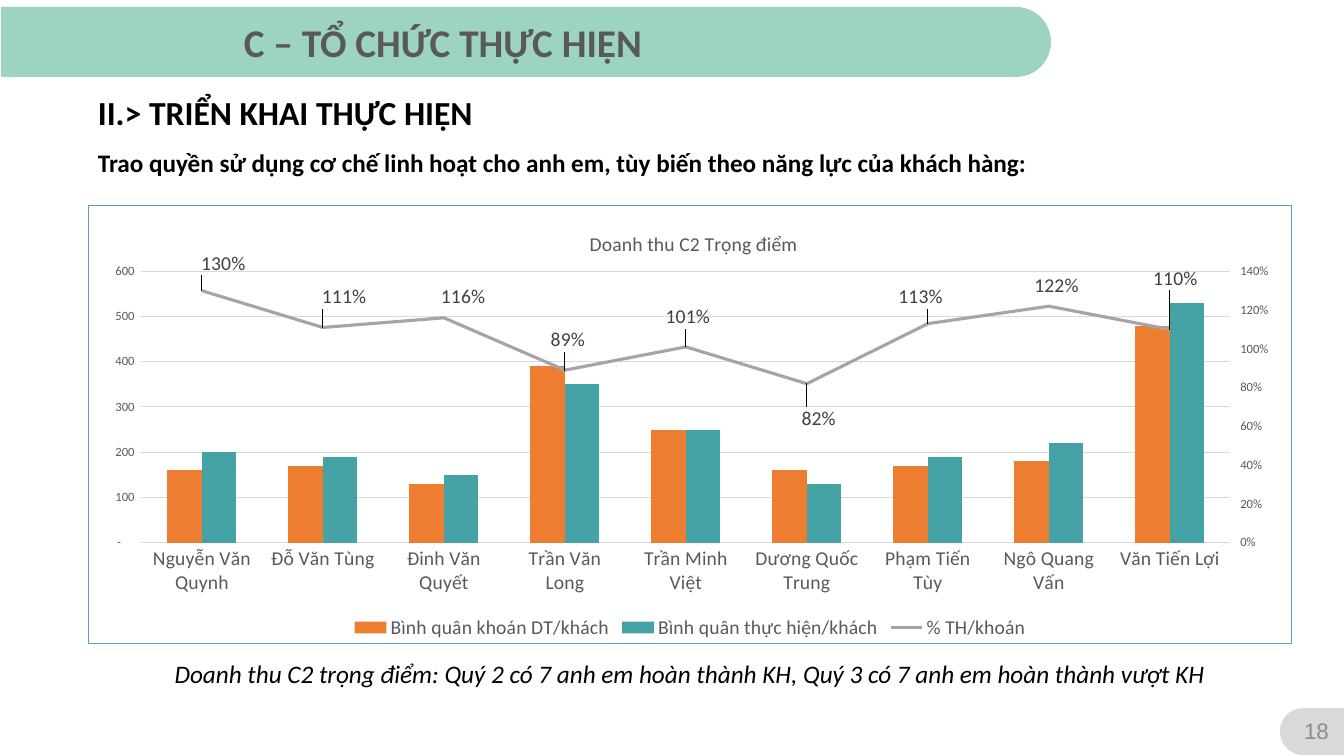
"""Build the slide on key customer revenue with a combined column and line chart."""
from lxml.etree import SubElement
from pptx import Presentation
from pptx.chart.data import CategoryChartData
from pptx.dml.color import RGBColor
from pptx.enum.chart import (
    XL_CHART_TYPE, XL_LABEL_POSITION, XL_LEGEND_POSITION, XL_MARKER_STYLE, XL_TICK_MARK)
from pptx.enum.shapes import MSO_SHAPE
from pptx.enum.text import MSO_ANCHOR, PP_ALIGN
from pptx.oxml import parse_xml
from pptx.oxml.ns import nsdecls, qn
from pptx.util import Emu, Pt

MINT = RGBColor(0x9C, 0xD4, 0xC1)
LIGHT_GRAY = RGBColor(0xD9, 0xD9, 0xD9)
PAGE_GRAY = RGBColor(0x8C, 0x8C, 0x8C)
DARK_GRAY = RGBColor(0x59, 0x59, 0x59)
LABEL_GRAY = RGBColor(0x40, 0x40, 0x40)
LINE_GRAY = RGBColor(0xA5, 0xA5, 0xA5)
ORANGE = RGBColor(0xED, 0x7D, 0x31)
TEAL = RGBColor(0x45, 0xA3, 0xA5)
BLUE = RGBColor(0x5B, 0x9B, 0xD5)
BLACK = RGBColor(0, 0, 0)


def px(count):
    return Emu(round(count * 914400 / 100.8))


def add_text(text, left, top, width, height, size, color=BLACK, font="Calibri", bold=False,
             italic=False, align=PP_ALIGN.LEFT, anchor=MSO_ANCHOR.TOP, spacing=1.0):
    frame = slide.shapes.add_textbox(px(left), px(top), px(width), px(height)).text_frame
    frame.word_wrap = True
    frame.vertical_anchor = anchor
    paragraph = frame.paragraphs[0]
    paragraph.alignment = align
    paragraph.line_spacing = spacing
    run = paragraph.add_run()
    run.text = text
    run.font.name = font
    run.font.size = Pt(size)
    run.font.bold = bold
    run.font.italic = italic
    run.font.color.rgb = color


presentation = Presentation()
presentation.slide_width = px(1344)
presentation.slide_height = px(756)
slide = presentation.slides.add_slide(presentation.slide_layouts[6])

for left, top, width, height, rotation, color in [
    (491, -483, 70, 1050, 90, MINT),
    (1289, 699, 47, 65, 270, LIGHT_GRAY),
]:
    shape = slide.shapes.add_shape(
        MSO_SHAPE.ROUND_2_SAME_RECTANGLE, px(left), px(top), px(width), px(height))
    shape.adjustments[0] = 0.5
    shape.rotation = rotation
    shape.shadow.inherit = False
    shape.fill.solid()
    shape.fill.fore_color.rgb = color
    shape.line.fill.background()

add_text("18", 1292, 711, 49, 40, 16, color=PAGE_GRAY, font="Arial",
         align=PP_ALIGN.CENTER, anchor=MSO_ANCHOR.MIDDLE)
add_text("C – TỔ CHỨC THỰC HIỆN", 234, 13, 814, 57, 28, color=DARK_GRAY, bold=True)

CHART_LEFT, CHART_TOP, CHART_WIDTH, CHART_HEIGHT = 88, 205, 1204, 439
PLOT_LEFT, PLOT_TOP, PLOT_WIDTH, PLOT_HEIGHT = 141, 271, 1090, 272

chart_data = CategoryChartData(number_format="#,##0")
chart_data.categories = [
    "Nguyễn Văn Quynh", "Đỗ Văn Tùng", "Đinh Văn Quyết", "Trần Văn Long", "Trần Minh Việt",
    "Dương Quốc Trung", "Phạm Tiến Tùy", "Ngô Quang Vấn", "Văn Tiến Lợi"]
ratios = [1.3, 1.11, 1.16, 0.89, 1.01, 0.82, 1.13, 1.22, 1.1]
chart_data.add_series("Bình quân khoán DT/khách", [160, 170, 130, 390, 250, 160, 170, 180, 480])
chart_data.add_series("Bình quân thực hiện/khách", [200, 190, 150, 350, 250, 130, 190, 220, 530])
chart_data.add_series("% TH/khoán", ratios, number_format="0%")
chart = slide.shapes.add_chart(
    XL_CHART_TYPE.COLUMN_CLUSTERED, px(CHART_LEFT), px(CHART_TOP),
    px(CHART_WIDTH), px(CHART_HEIGHT), chart_data).chart

chart.font.name = "Calibri"
chart.font.size = Pt(10)
chart.has_title = True
chart.chart_title.text_frame.text = "Doanh thu C2 Trọng điểm"
chart.has_legend = True
chart.legend.position = XL_LEGEND_POSITION.BOTTOM
chart.legend.include_in_layout = False

category_axis, value_axis = chart.category_axis, chart.value_axis
for axis in (category_axis, value_axis):
    axis.major_tick_mark = XL_TICK_MARK.NONE
    axis.minor_tick_mark = XL_TICK_MARK.NONE
    axis.format.line.fill.background()
value_axis.minimum_scale = 0
value_axis.maximum_scale = 600
value_axis.major_unit = 100
value_axis.major_gridlines.format.line.color.rgb = LIGHT_GRAY
value_axis.major_gridlines.format.line.width = Pt(0.75)
value_axis.tick_labels.number_format = '_(* #,##0_);_(* \\(#,##0\\);_(* "-"??_);_(@_)'
value_axis.tick_labels.number_format_is_linked = False

title_font = chart.chart_title.text_frame.paragraphs[0].runs[0].font
title_font.bold = False
for font, size in [(title_font, 14), (chart.legend.font, 14),
                   (category_axis.tick_labels.font, 14), (value_axis.tick_labels.font, 9)]:
    font.name = "Calibri"
    font.size = Pt(size)
    font.color.rgb = DARK_GRAY

columns = chart.plots[0]
columns.gap_width = 150
columns.overlap = 0
columns.vary_by_categories = False
for series, color in zip(columns.series, [ORANGE, TEAL]):
    series.format.fill.solid()
    series.format.fill.fore_color.rgb = color

chart_element = chart.element.find(qn("c:chart"))
plot_area = chart_element.find(qn("c:plotArea"))
bar_chart = plot_area.find(qn("c:barChart"))
line_chart = parse_xml(
    f'<c:lineChart {nsdecls("c")}><c:grouping val="standard"/><c:varyColors val="0"/>'
    '<c:marker val="1"/><c:axId val="5001"/><c:axId val="5002"/></c:lineChart>')
ratio_element = bar_chart.findall(qn("c:ser"))[2]
for invert_element in ratio_element.findall(qn("c:invertIfNegative")):
    ratio_element.remove(invert_element)
line_chart.insert(2, ratio_element)
bar_chart.addnext(line_chart)

right_axis = parse_xml(
    f'<c:valAx {nsdecls("c", "a")}><c:axId val="5002"/><c:scaling><c:orientation val="minMax"/>'
    '<c:max val="1.4"/><c:min val="0"/></c:scaling><c:delete val="0"/><c:axPos val="r"/>'
    '<c:numFmt formatCode="0%" sourceLinked="0"/><c:majorTickMark val="out"/>'
    '<c:minorTickMark val="none"/><c:tickLblPos val="nextTo"/>'
    '<c:spPr><a:ln><a:noFill/></a:ln></c:spPr><c:txPr><a:bodyPr/><a:p><a:pPr><a:defRPr sz="900">'
    f'<a:solidFill><a:srgbClr val="{DARK_GRAY}"/></a:solidFill><a:latin typeface="Calibri"/>'
    '</a:defRPr></a:pPr><a:endParaRPr lang="vi-VN"/></a:p></c:txPr>'
    '<c:crossAx val="5001"/><c:crosses val="max"/><c:crossBetween val="between"/>'
    '<c:majorUnit val="0.2"/></c:valAx>')
hidden_axis = parse_xml(
    f'<c:catAx {nsdecls("c")}><c:axId val="5001"/><c:scaling><c:orientation val="minMax"/>'
    '</c:scaling><c:delete val="1"/><c:axPos val="b"/><c:majorTickMark val="none"/>'
    '<c:minorTickMark val="none"/><c:tickLblPos val="nextTo"/><c:crossAx val="5002"/>'
    '<c:crosses val="autoZero"/></c:catAx>')
plot_area.find(qn("c:valAx")).addnext(right_axis)
right_axis.addnext(hidden_axis)

ratio_series = chart.plots[1].series[0]
ratio_series.smooth = False
ratio_series.format.line.color.rgb = LINE_GRAY
ratio_series.format.line.width = Pt(2.25)
ratio_series.marker.style = XL_MARKER_STYLE.NONE

label_centers = [(223, 263), (344, 297), (463, 297), (568, 340), (688, 317),
                 (819, 419), (921, 297), (1057, 285), (1176, 278)]
for index, (ratio, (label_x, label_y)) in enumerate(zip(ratios, label_centers)):
    label = ratio_series.points[index].data_label
    label.font.name = "Calibri"
    label.font.size = Pt(14)
    label.font.color.rgb = LABEL_GRAY
    label.position = XL_LABEL_POSITION.ABOVE
    point_x = PLOT_LEFT + PLOT_WIDTH * (index + 0.5) / len(ratios)
    point_y = PLOT_TOP + PLOT_HEIGHT * (1 - ratio / 1.4)
    label_element = ratio_element.findall(f'{qn("c:dLbls")}/{qn("c:dLbl")}')[index]
    label_element.find(qn("c:idx")).addnext(parse_xml(
        f'<c:layout {nsdecls("c")}><c:manualLayout>'
        f'<c:x val="{(label_x - point_x) / CHART_WIDTH:.4f}"/>'
        f'<c:y val="{(label_y - point_y + 16) / CHART_HEIGHT:.4f}"/>'
        '</c:manualLayout></c:layout>'))
    label_element.find(qn("c:layout")).addnext(parse_xml(
        f'<c:numFmt {nsdecls("c")} formatCode="0%" sourceLinked="0"/>'))

for parent, position, settings in [
    (plot_area, 0, [("layoutTarget", "inner"), ("xMode", "edge"), ("yMode", "edge"),
                    ("x", (PLOT_LEFT - CHART_LEFT) / CHART_WIDTH),
                    ("y", (PLOT_TOP - CHART_TOP) / CHART_HEIGHT),
                    ("w", PLOT_WIDTH / CHART_WIDTH), ("h", PLOT_HEIGHT / CHART_HEIGHT)]),
    (chart_element.find(qn("c:title")), 1, [("xMode", "edge"), ("yMode", "edge"),
                                            ("x", (586 - CHART_LEFT) / CHART_WIDTH),
                                            ("y", (226 - CHART_TOP) / CHART_HEIGHT)]),
]:
    for layout in parent.findall(qn("c:layout")):
        parent.remove(layout)
    layout = parse_xml(f'<c:layout {nsdecls("c")}/>')
    manual_layout = SubElement(layout, qn("c:manualLayout"))
    for name, value in settings:
        SubElement(manual_layout, qn(f"c:{name}")).set("val", str(value))
    parent.insert(position, layout)

chart_element.addnext(parse_xml(
    f'<c:spPr {nsdecls("c", "a")}><a:solidFill><a:srgbClr val="FFFFFF"/></a:solidFill>'
    f'<a:ln w="9525"><a:solidFill><a:srgbClr val="{BLUE}"/></a:solidFill></a:ln></c:spPr>'))

add_text("Doanh thu C2 trọng điểm: Quý 2 có 7 anh em hoàn thành KH, Quý 3 có 7 anh em hoàn thành vượt KH",
         88, 653, 1204, 40, 18, italic=True, align=PP_ALIGN.CENTER)
add_text("Trao quyền sử dụng cơ chế linh hoạt cho anh em, tùy biến theo năng lực của khách hàng:",
         88, 146, 1033, 37, 18, bold=True, anchor=MSO_ANCHOR.MIDDLE, spacing=0.9)
add_text("II.> TRIỂN KHAI THỰC HIỆN", 88, 87, 814, 50, 24, bold=True)
presentation.save("out.pptx")
